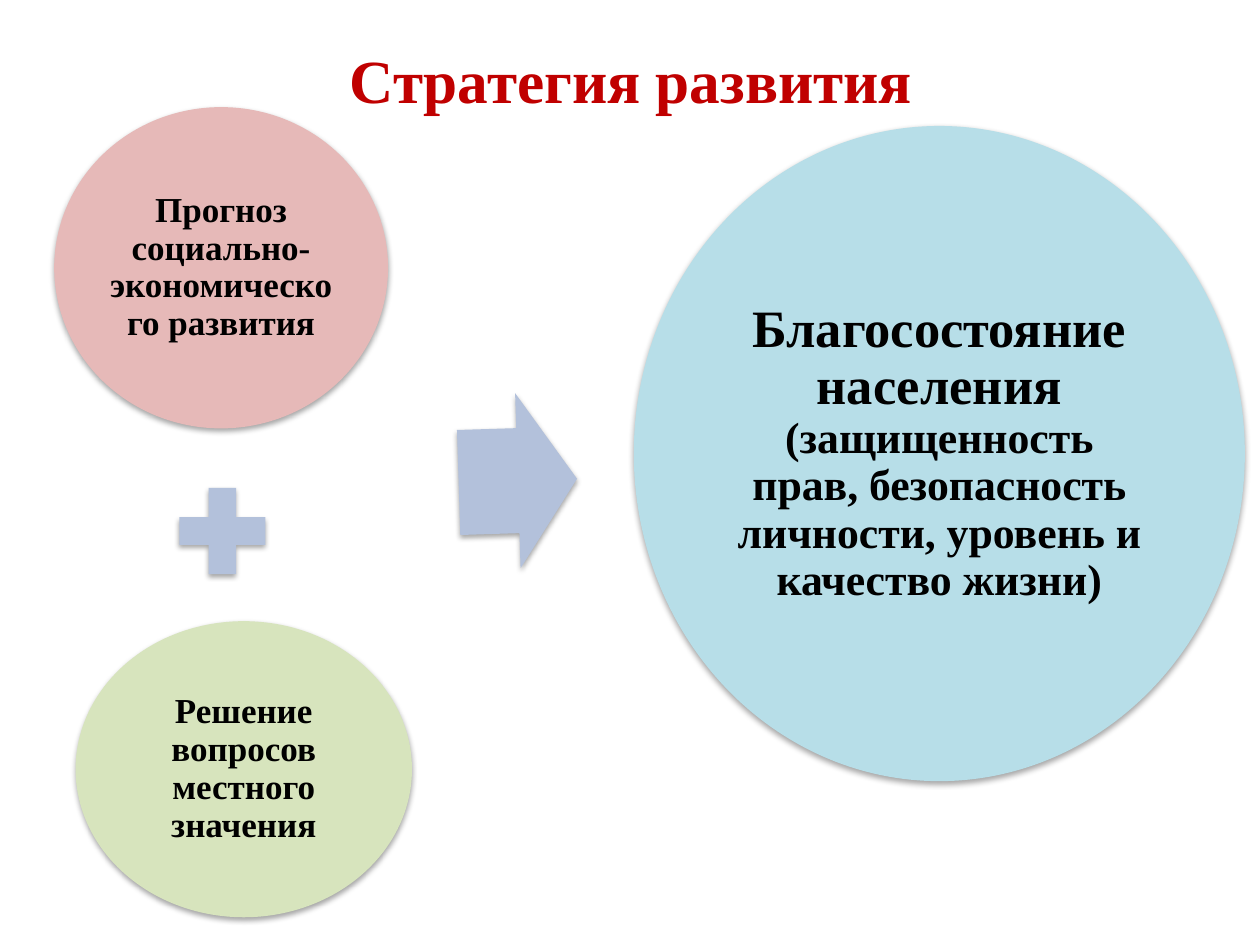
import pptx
import pptx.util
import pptx.dml.color
import pptx.enum.shapes
import pptx.enum.text
import pptx.oxml
import pptx.oxml.ns

Inches, Pt = pptx.util.Inches, pptx.util.Pt
SHAPE = pptx.enum.shapes.MSO_SHAPE
CENTER = pptx.enum.text.PP_ALIGN.CENTER
MIDDLE = pptx.enum.text.MSO_ANCHOR.MIDDLE

# Content: text runs are (text, size)
TITLE = [("Стратегия развития", 35)]
CIRCLES = [
    # left, top, width, height, fill, inset, runs
    (0.43, 0.85, 2.65, 2.55, "E6B9B8", 0.03,
     [("Прогноз социально-экономического развития", 20)]),
    (0.6, 4.93, 2.67, 2.35, "D7E4BD", 0.03,
     [("Решение вопросов местного значения", 20)]),
    (5.03, 1, 4.85, 5.2, "B7DEE8", 0.04,
     [("Благосостояние населения ", 30),
      ("(защищенность прав, безопасность личности, уровень и качество жизни)", 25)]),
]
SIGNS = [
    # preset, left, top, width, height, rotation, adjustments
    (SHAPE.MATH_PLUS, 1.3, 3.75, 0.93, 0.93, 0, []),
    (SHAPE.RIGHT_ARROW, 3.64, 3.12, 0.94, 1.39, 358.2, [0.6, 0.5]),
]
SIGN_FILL = "B3C1DB"
SHADOW = (
    '<a:effectLst %s><a:outerShdw blurRad="%d" dist="%d" dir="5400000" rotWithShape="0">'
    '<a:srgbClr val="000000"><a:alpha val="35000"/></a:srgbClr>'
    '</a:outerShdw></a:effectLst>'
) % (pptx.oxml.ns.nsdecls("a"), Pt(3.1), Pt(1.8))


def color(value):
    return pptx.dml.color.RGBColor.from_string(value)


def write(shape, runs, text_color, inset, line_spacing):
    frame = shape.text_frame
    margins = {"margin_" + side: Inches(inset)
               for side in ("left", "top", "right", "bottom")}
    for name, value in {"word_wrap": True, "vertical_anchor": MIDDLE, **margins}.items():
        setattr(frame, name, value)
    para = frame.paragraphs[0]
    para.alignment = CENTER
    para.line_spacing = line_spacing
    for text, size in runs:
        span = para.add_run()
        span.text = text
        style = {"name": "Times New Roman", "size": Pt(size), "bold": True}
        for name, value in style.items():
            setattr(span.font, name, value)
        span.font.color.rgb = color(text_color)


def add_figure(page, preset, place, fill):
    shape = page.shapes.add_shape(preset, *map(Inches, place))
    shape.fill.solid()
    shape.fill.fore_color.rgb = color(fill)
    shape.line.fill.background()
    # Soft shadow falling straight down
    shape._element.spPr.append(pptx.oxml.parse_xml(SHADOW))
    return shape


deck = pptx.Presentation()
deck.slide_width, deck.slide_height = Inches(10), Inches(7.5)
page = deck.slides.add_slide(deck.slide_layouts[6])

# Title
title = page.shapes.add_textbox(*map(Inches, (0.51, 0, 9, 1.25)))
write(title, TITLE, "C00000", 0.05, 1.0)

# Circles with their text
for *place, fill, inset, runs in CIRCLES:
    circle = add_figure(page, SHAPE.OVAL, place, fill)
    write(circle, runs, "000000", inset, 0.9)

# Plus sign and arrow
for preset, *place, rotation, adjustments in SIGNS:
    sign = add_figure(page, preset, place, SIGN_FILL)
    sign.rotation = rotation
    for index, value in enumerate(adjustments):
        sign.adjustments[index] = value

deck.save("out.pptx")
